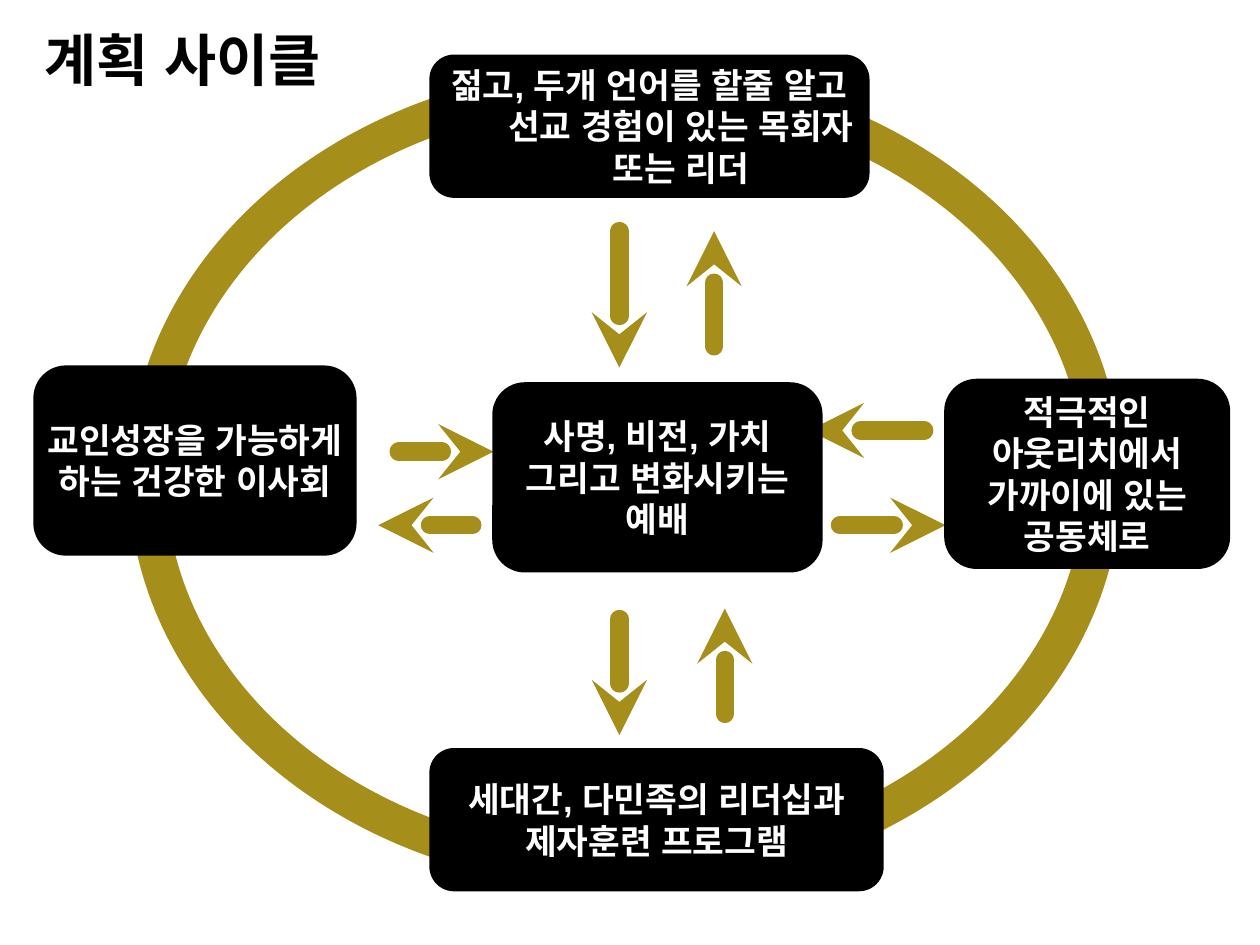
from dataclasses import dataclass

from lxml import etree
from pptx import Presentation
from pptx.dml.color import RGBColor
from pptx.enum.lang import MSO_LANGUAGE_ID as Lang
from pptx.enum.shapes import MSO_CONNECTOR as Conn, MSO_SHAPE as Shape
from pptx.enum.text import MSO_ANCHOR as Anchor, PP_ALIGN as Align
from pptx.oxml.ns import qn
from pptx.util import Inches, Pt

TITLE = ("계획 사이클", (0.22, 0.21, 3.67, 0.95))
RING = (1.66, 0.95, 10.79, 8.89)
HANGING = 0.71

# text, box, side inset, hanging indent
BOXES = [
    ("젊고, 두개 언어를 할줄 알고 선교 경험이 있는 목회자 또는 리더",
     (4.86, 0.63, 4.94, 1.59), 0.08, HANGING),
    ("세대간, 다민족의 리더십과 제자훈련 프로그램",
     (4.86, 8.46, 5.1, 1.59), 0.08, 0),
    ("적극적인 아웃리치에서 가까이에 있는 공동체로",
     (10.67, 4.29, 3.2, 2.12), 0.1, 0),
    ("사명, 비전, 가치 그리고 변화시키는 예배",
     (5.57, 4.33, 3.7, 2.12), 0.1, 0),
    ("교인성장을 가능하게 하는 건강한 이사회",
     (0.39, 4.14, 3.62, 2.12), 0.1, 0),
]

VERTICAL_ARROWS = [(6.99, 6.99, 8.3), (6.99, 2.61, 4.15),
                   (8.18, 8.06, 6.87), (8.06, 3.91, 2.61)]
HORIZONTAL_ARROWS = [(5.93, 9.48, 10.67), (5.93, 5.33, 4.27),
                     (4.86, 10.43, 9.13), (5.1, 4.5, 5.57)]


@dataclass(frozen=True)
class Theme:
    font: str = "Arial"
    gold: RGBColor = RGBColor(0xA5, 0x8E, 0x1A)
    black: RGBColor = RGBColor(0, 0, 0)
    white: RGBColor = RGBColor(255, 255, 255)
    title_size: int = 46
    box_size: int = 28
    ring_width: int = 30
    arrow_width: int = 15
    box_line: int = 2


THEME = Theme()


def set_line(line, color, width):
    line.color.rgb = color
    line.width = Pt(width)


def set_text(s, text, size, color, anchor, insets):
    tf = s.text_frame
    tf.text = text
    tf.word_wrap = True
    tf.vertical_anchor = anchor
    tf.margin_left, tf.margin_top, tf.margin_right, tf.margin_bottom = map(Inches, insets)
    p = tf.paragraphs[0]
    p.alignment = Align.CENTER
    for r in p.runs:
        r.font.name = THEME.font
        r.font.size = Pt(size)
        r.font.bold = True
        r.font.color.rgb = color
        r.font.language_id = Lang.KOREAN
    return p


def add_title(slide, text, box):
    s = slide.shapes.title
    s.left, s.top, s.width, s.height = map(Inches, box)
    set_text(s, text, THEME.title_size, THEME.black, Anchor.TOP, [0.07] * 4)


def add_ring(slide, box):
    s = slide.shapes.add_shape(Shape.OVAL, *map(Inches, box))
    s.shadow.inherit = False
    s.fill.background()
    set_line(s.line, THEME.gold, THEME.ring_width)


def add_arrow(slide, x1, y1, x2, y2):
    c = slide.shapes.add_connector(Conn.STRAIGHT, *map(Inches, (x1, y1, x2, y2)))
    set_line(c.line, THEME.gold, THEME.arrow_width)
    sp_pr = c._element.spPr
    ln = sp_pr.find(qn("a:ln"))
    ln.set("cap", "rnd")
    etree.SubElement(ln, qn("a:round"))
    etree.SubElement(ln, qn("a:tailEnd"), type="stealth")
    etree.SubElement(sp_pr, qn("a:effectLst"))


def add_box(slide, text, box, inset, hanging):
    s = slide.shapes.add_shape(Shape.ROUNDED_RECTANGLE, *map(Inches, box))
    s.shadow.inherit = False
    s.fill.solid()
    s.fill.fore_color.rgb = THEME.black
    set_line(s.line, THEME.black, THEME.box_line)
    # The rounded corner adds its own text inset, which is taken off here.
    corner = min(box[2:]) * 0.167 * 0.29
    side = round(inset - corner, 2)
    p = set_text(s, text, THEME.box_size, THEME.white, Anchor.MIDDLE, (side, 0, side, 0))
    if hanging:
        p_pr = p._p.get_or_add_pPr()
        p_pr.set("marL", str(Inches(hanging)))
        p_pr.set("indent", str(-Inches(hanging)))


def main():
    prs = Presentation()
    prs.slide_width, prs.slide_height = Inches(14.22), Inches(10.67)
    slide = prs.slides.add_slide(prs.slide_layouts[5])
    add_title(slide, *TITLE)
    add_ring(slide, RING)
    for x, start, end in VERTICAL_ARROWS:
        add_arrow(slide, x, start, x, end)
    for y, start, end in HORIZONTAL_ARROWS:
        add_arrow(slide, start, y, end, y)
    for item in BOXES:
        add_box(slide, *item)
    prs.save("out.pptx")


if __name__ == "__main__":
    main()
